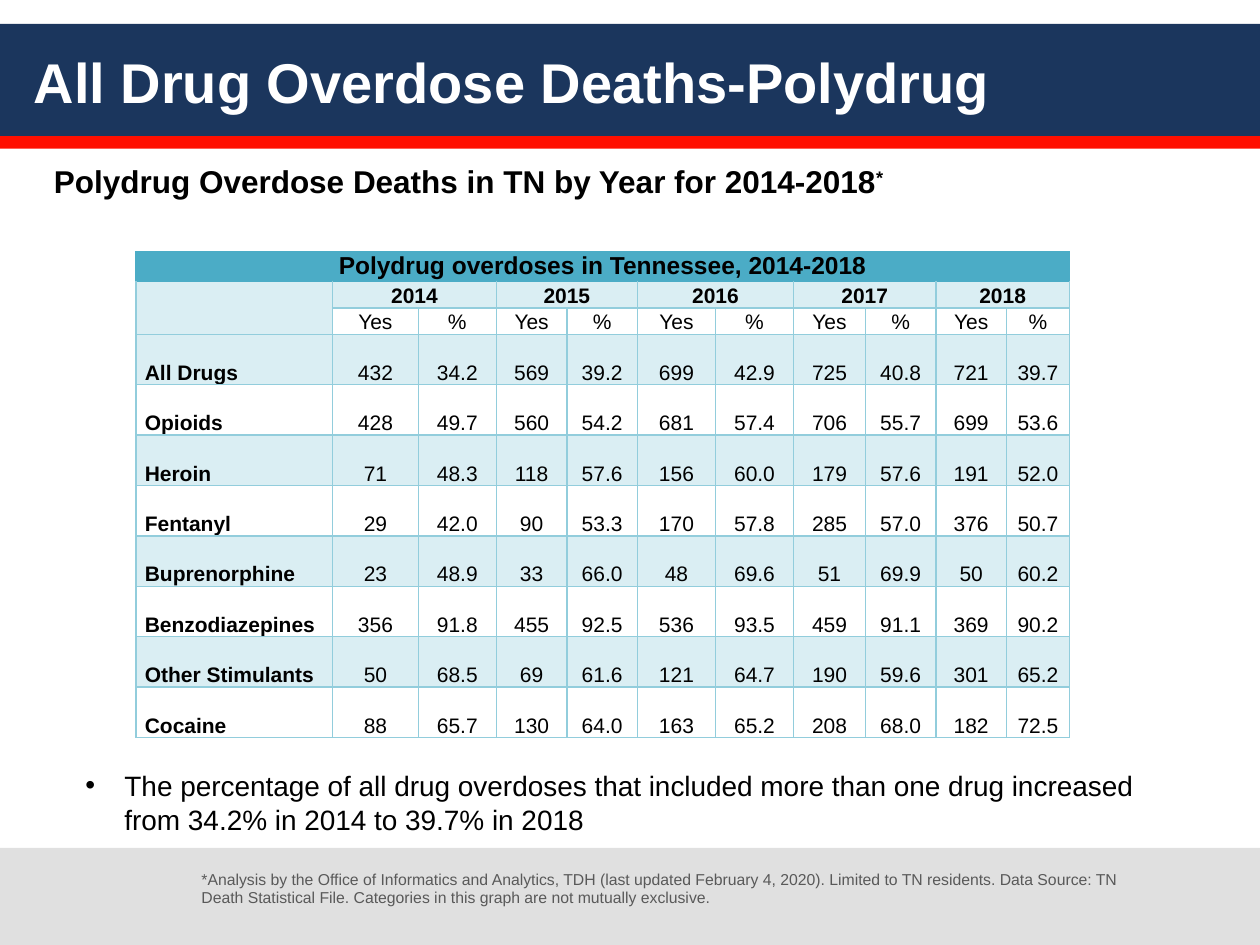
from dataclasses import dataclass

from lxml import etree
from pptx import Presentation
from pptx.dml.color import RGBColor
from pptx.enum.shapes import MSO_SHAPE
from pptx.enum.text import MSO_ANCHOR, PP_ALIGN
from pptx.oxml.ns import qn
from pptx.util import Inches, Pt

RECTANGLE = MSO_SHAPE.RECTANGLE
TOP, MIDDLE, BOTTOM = MSO_ANCHOR.TOP, MSO_ANCHOR.MIDDLE, MSO_ANCHOR.BOTTOM
LEFT, CENTER = PP_ALIGN.LEFT, PP_ALIGN.CENTER

FONT = "Arial"
COLORS = {
    "navy": "1B365D", "red": "FF0F00", "footer": "E0E0E0", "white": "FFFFFF",
    "black": "000000", "gray": "595959", "teal": "4BACC6", "pale": "DAEEF3",
    "grid": "92CDDC",
}


@dataclass
class Band:
    top: float
    height: float
    color: str


@dataclass
class Caption:
    text: str
    left: float
    top: float
    width: float
    height: float
    size: int
    color: str = "black"
    bold: bool = False
    anchor: MSO_ANCHOR = TOP


BANDS = [Band(0.19, 0.89, "navy"), Band(1.08, 0.1, "red"), Band(6.73, 0.77, "footer")]

TITLE = Caption("All Drug Overdose Deaths-Polydrug", 0.17, 0.19, 9.67, 0.9, 32,
                "white", True, MIDDLE)
SUBTITLE = Caption("Polydrug Overdose Deaths in TN by Year for 2014-2018",
                   0.33, 1.24, 7.58, 0.4, 18, bold=True)
FINDING = Caption("The percentage of all drug overdoses that included more than one drug "
                  "increased from 34.2% in 2014 to 39.7% in 2018",
                  0.58, 6.05, 8.83, 0.64, 16)
SOURCE_NOTE = Caption("*Analysis by the Office of Informatics and Analytics, TDH (last updated "
                      "February 4, 2020). Limited to TN residents. Data Source: TN Death "
                      "Statistical File. Categories in this graph are not mutually exclusive.",
                      1.5, 6.85, 7.58, 0.4, 9, "gray")

TABLE_TITLE = "Polydrug overdoses in Tennessee, 2014-2018"
YEARS = ["2014", "2015", "2016", "2017", "2018"]
MEASURES = ["Yes", "%"]
DEATHS = {
    "All Drugs": "432 34.2 569 39.2 699 42.9 725 40.8 721 39.7",
    "Opioids": "428 49.7 560 54.2 681 57.4 706 55.7 699 53.6",
    "Heroin": "71 48.3 118 57.6 156 60.0 179 57.6 191 52.0",
    "Fentanyl": "29 42.0 90 53.3 170 57.8 285 57.0 376 50.7",
    "Buprenorphine": "23 48.9 33 66.0 48 69.6 51 69.9 50 60.2",
    "Benzodiazepines": "356 91.8 455 92.5 536 93.5 459 91.1 369 90.2",
    "Other Stimulants": "50 68.5 69 61.6 121 64.7 190 59.6 301 65.2",
    "Cocaine": "88 65.7 130 64.0 163 65.2 208 68.0 182 72.5",
}
COLUMN_WIDTHS = [1.56, 0.68, 0.62, 0.56, 0.56, 0.62, 0.62, 0.57, 0.56, 0.56, 0.5]
HEADER_HEIGHTS = [0.23, 0.21, 0.21]
DRUG_ROW_HEIGHT = 0.4


def rgb(name: str) -> RGBColor:
    return RGBColor.from_string(COLORS[name])


def style_paragraph(paragraph, size: int, color: str, bold: bool) -> None:
    font = paragraph.font
    font.name, font.size, font.bold = FONT, Pt(size), bold
    font.color.rgb = rgb(color)


def add_band(slide, band: Band) -> None:
    shape = slide.shapes.add_shape(RECTANGLE, 0, Inches(band.top), Inches(10),
                                   Inches(band.height))
    shape.shadow.inherit = False
    shape.fill.solid()
    shape.fill.fore_color.rgb = rgb(band.color)
    shape.line.fill.background()


def add_caption(slide, caption: Caption, bulleted: bool = False):
    """Add a wrapped text box and return its paragraph."""
    frame = slide.shapes.add_textbox(Inches(caption.left), Inches(caption.top),
                                     Inches(caption.width), Inches(caption.height)).text_frame
    frame.word_wrap = True
    frame.vertical_anchor = caption.anchor
    paragraph = frame.paragraphs[0]
    paragraph.add_run().text = caption.text
    if bulleted:
        properties = paragraph._p.get_or_add_pPr()
        indent = Inches(0.31)
        properties.set("marL", str(indent))
        properties.set("indent", str(-indent))
        etree.SubElement(properties, qn("a:buFont"), typeface=FONT)
        etree.SubElement(properties, qn("a:buChar"), char="•")
    style_paragraph(paragraph, caption.size, caption.color, caption.bold)
    return paragraph


def set_borders(cell, color: str, top_color: str) -> None:
    properties = cell._tc.get_or_add_tcPr()
    for side in ("lnL", "lnR", "lnT", "lnB"):
        line = etree.SubElement(properties, qn(f"a:{side}"), w=str(Pt(1)))
        fill = etree.SubElement(line, qn("a:solidFill"))
        side_color = top_color if side == "lnT" else color
        etree.SubElement(fill, qn("a:srgbClr"), val=COLORS[side_color])


def format_cell(cell, row: int, column: int) -> None:
    is_title, is_year = row == 0, row == 1
    set_borders(cell, "teal" if is_title else "grid", "teal" if row <= 1 else "grid")
    if is_title or row % 2:
        cell.fill.solid()
        cell.fill.fore_color.rgb = rgb("teal" if is_title else "pale")
    else:
        cell.fill.background()
    cell.margin_left = cell.margin_right = Inches(0.07)
    cell.margin_top = cell.margin_bottom = 0
    cell.vertical_anchor = TOP if is_title else BOTTOM
    paragraph = cell.text_frame.paragraphs[0]
    paragraph.alignment = LEFT if column == 0 and not is_title else CENTER
    style_paragraph(paragraph, 14 if is_title else 12, "black",
                    is_title or is_year or column == 0)


def add_deaths_table(slide) -> None:
    year_cells = [text for year in YEARS for text in (year, "")]
    rows = [
        [TABLE_TITLE] + [""] * len(year_cells),
        [""] + year_cells,
        [""] + MEASURES * len(YEARS),
        *([drug, *values.split()] for drug, values in DEATHS.items()),
    ]
    heights = HEADER_HEIGHTS + [DRUG_ROW_HEIGHT] * len(DEATHS)
    table = slide.shapes.add_table(len(rows), len(COLUMN_WIDTHS), Inches(1.08), Inches(2),
                                   Inches(sum(COLUMN_WIDTHS)), Inches(sum(heights))).table
    table.first_row = table.horz_banding = False
    for column, width in zip(table.columns, COLUMN_WIDTHS):
        column.width = Inches(width)
    for row, height in zip(table.rows, heights):
        row.height = Inches(height)
    for r, texts in enumerate(rows):
        for c, text in enumerate(texts):
            cell = table.cell(r, c)
            if text:
                cell.text = text
            format_cell(cell, r, c)
    table.cell(0, 0).merge(table.cell(0, len(year_cells)))
    table.cell(1, 0).merge(table.cell(2, 0))
    for c in range(1, len(year_cells), len(MEASURES)):
        table.cell(1, c).merge(table.cell(1, c + 1))


def main() -> None:
    presentation = Presentation()
    presentation.slide_width, presentation.slide_height = Inches(10), Inches(7.5)
    slide = presentation.slides.add_slide(presentation.slide_layouts[6])
    for band in BANDS:
        add_band(slide, band)
    add_caption(slide, TITLE)
    footnote_mark = add_caption(slide, SUBTITLE).add_run()
    footnote_mark.text = "*"
    footnote_mark._r.get_or_add_rPr().set("baseline", "30000")
    add_caption(slide, FINDING, bulleted=True)
    add_caption(slide, SOURCE_NOTE)
    add_deaths_table(slide)
    presentation.save("out.pptx")


if __name__ == "__main__":
    main()
